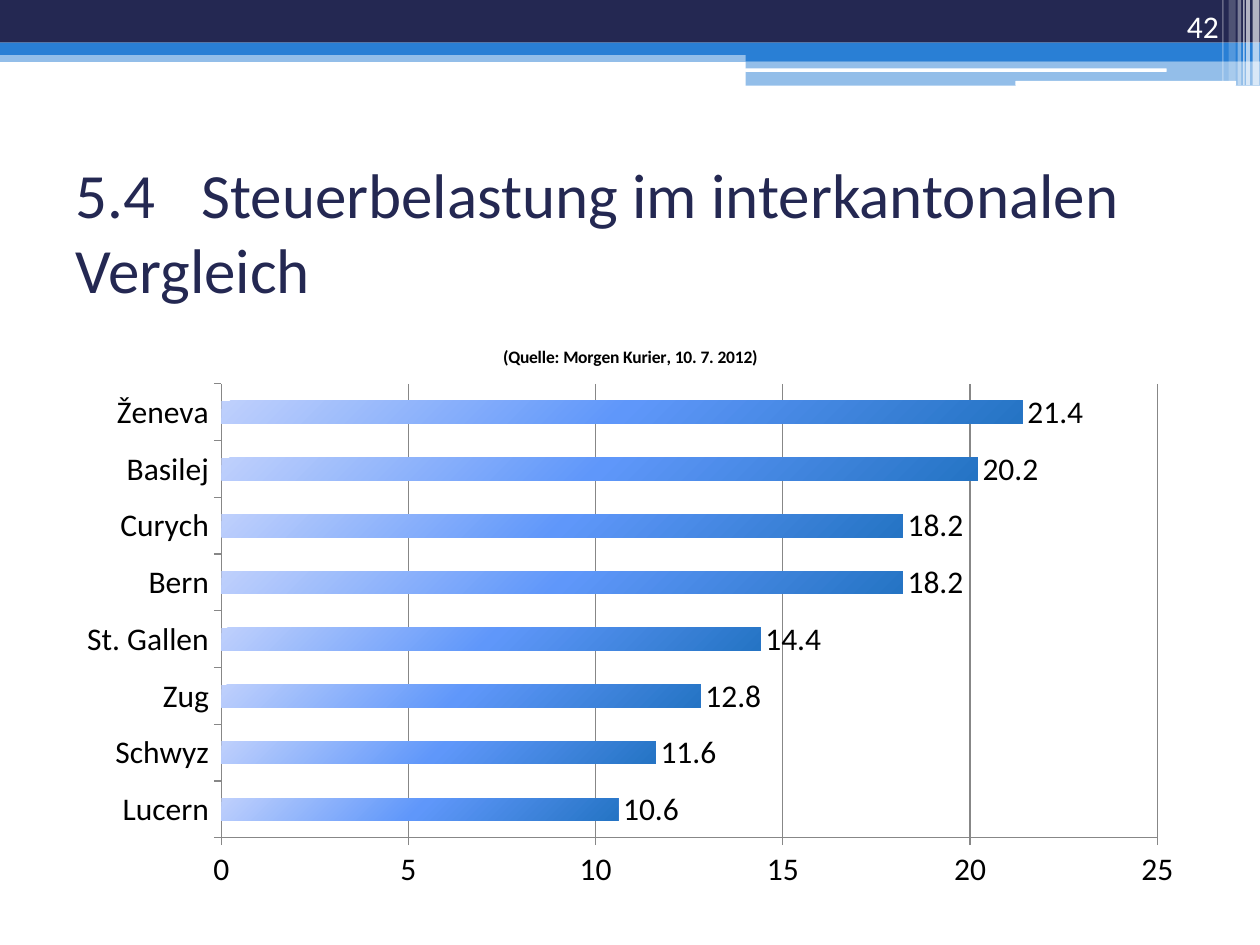
from copy import deepcopy
from dataclasses import dataclass

from lxml import etree
from pptx import Presentation
from pptx.chart.data import CategoryChartData
from pptx.dml.color import RGBColor
from pptx.enum.chart import XL_CHART_TYPE, XL_LABEL_POSITION, XL_TICK_MARK
from pptx.enum.shapes import MSO_SHAPE
from pptx.enum.text import MSO_ANCHOR, MSO_AUTO_SIZE, PP_ALIGN
from pptx.oxml.ns import qn
from pptx.util import Cm, Pt

RECT, ROUND = MSO_SHAPE.RECTANGLE, MSO_SHAPE.ROUNDED_RECTANGLE
LEFT, RIGHT = PP_ALIGN.LEFT, PP_ALIGN.RIGHT
MIDDLE, BOTTOM = MSO_ANCHOR.MIDDLE, MSO_ANCHOR.BOTTOM
FIXED = MSO_AUTO_SIZE.NONE
BAR = XL_CHART_TYPE.BAR_CLUSTERED
OUT_END = XL_LABEL_POSITION.OUTSIDE_END
OUT, NONE = XL_TICK_MARK.OUTSIDE, XL_TICK_MARK.NONE


@dataclass(frozen=True)
class Theme:
    font: str = "Calibri"
    navy: str = "242852"
    blue: str = "297FD5"
    white: str = "FFFFFF"
    black: str = "000000"
    grey: str = "878787"
    shades: tuple = ("BFD0FC", "5F97FA", "2574C4")
    head: int = 36
    body: int = 18
    note: int = 10


class Deck:
    """Draws styled elements on the current slide."""

    def __init__(self, theme):
        self.theme = theme
        self.prs = Presentation()
        self.prs.slide_width, self.prs.slide_height = Cm(25.4), Cm(19.05)
        self.slide = self.prs.slides.add_slide(self.prs.slide_layouts[5])

    def style(self, font, size, color, bold=False):
        font.name, font.size, font.bold = self.theme.font, Pt(size), bold
        font.color.rgb = RGBColor.from_string(color)

    def band(self, box, color, alpha=100, kind=RECT):
        shape = self.slide.shapes.add_shape(kind, *map(Cm, box))
        shape.shadow.inherit = False
        shape.line.fill.background()
        shape.fill.solid()
        shape.fill.fore_color.rgb = RGBColor.from_string(color)
        if alpha < 100:
            tint = shape.element.spPr.find(".//" + qn("a:srgbClr"))
            etree.SubElement(tint, qn("a:alpha"), val=str(alpha * 1000))

    def set_text(self, shape, words, size, color, align, anchor):
        frame = shape.text_frame
        frame.word_wrap, frame.auto_size = True, FIXED
        frame.vertical_anchor = anchor
        para = frame.paragraphs[0]
        para.alignment = align
        run = para.add_run()
        run.text = words
        self.style(run.font, size, color)

    def title(self, box, words):
        shape = self.slide.shapes.title
        shape.left, shape.top, shape.width, shape.height = map(Cm, box)
        self.set_text(shape, words, self.theme.head, self.theme.navy, LEFT, MIDDLE)

    def label(self, box, words):
        shape = self.slide.shapes.add_textbox(*map(Cm, box))
        self.set_text(shape, words, self.theme.body, self.theme.white, RIGHT, BOTTOM)

    def shade(self, chart, fill):
        fill.gradient()
        fill.gradient_angle = 315
        first = chart.element.find(".//" + qn("a:gs"))
        first.addnext(deepcopy(first))
        shades = self.theme.shades
        for i, (stop, color) in enumerate(zip(fill.gradient_stops, shades)):
            stop.position = i / (len(shades) - 1)
            stop.color.rgb = RGBColor.from_string(color)

    def rule(self, line):
        line.width = Pt(0.75)
        line.color.rgb = RGBColor.from_string(self.theme.grey)

    def chart(self, box, head, rows):
        theme = self.theme
        data = CategoryChartData(number_format="0.0")
        data.categories = [name for name, _ in rows]
        data.add_series("Series 1", [value for _, value in rows])
        chart = self.slide.shapes.add_chart(BAR, *map(Cm, box), data).chart
        self.style(chart.font, theme.body, theme.black)
        chart.has_legend = False
        chart.has_title = True
        run = chart.chart_title.text_frame.paragraphs[0].add_run()
        run.text = head
        self.style(run.font, theme.note, theme.black, bold=True)

        for axis in (chart.category_axis, chart.value_axis):
            axis.major_tick_mark, axis.minor_tick_mark = OUT, NONE
            self.rule(axis.format.line)
        chart.category_axis.has_major_gridlines = False
        scale = chart.value_axis
        scale.minimum_scale, scale.maximum_scale, scale.major_unit = 0, 25, 5
        scale.tick_labels.number_format = "0"
        scale.tick_labels.number_format_is_linked = False
        scale.has_major_gridlines = True
        self.rule(scale.major_gridlines.format.line)

        plot = chart.plots[0]
        plot.gap_width, plot.vary_by_categories = 150, False
        plot.has_data_labels = True
        labels = plot.data_labels
        labels.show_value, labels.position = True, OUT_END
        self.style(labels.font, theme.body, theme.black)
        self.shade(chart, plot.series[0].format.fill)


def main():
    theme = Theme()
    deck = Deck(theme)
    bands = [
        ((0, 1.02, 25.4, 0.23), theme.blue, 50),
        ((0, 0, 25.4, 0.86), theme.navy, 100),
        ((0, 0.86, 25.4, 0.25), theme.blue, 100),
        ((15.03, 0.98, 10.37, 0.25), theme.blue, 100),
        ((15.03, 1.23, 10.37, 0.5), theme.blue, 50),
    ]
    for box, color, alpha in bands:
        deck.band(box, color, alpha)
    for box in ((15.02, 1.38, 8.5, 0.07), (20.47, 1.63, 4.45, 0.1)):
        deck.band(box, theme.white, kind=ROUND)
    stripes = [
        (25.25, 0.14, 1.72, 65), (25.12, 0.08, 1.72, 65),
        (25.06, 0.03, 1.72, 60), (24.95, 0.07, 1.72, 40),
        (24.77, 0.14, 1.63, 20), (24.64, 0.03, 1.63, 30),
    ]
    for left, width, height, alpha in stripes:
        deck.band((left, 0, width, height), theme.white, alpha)

    deck.title((1.27, 3.17, 22.86, 2.97),
               "5.4\tSteuerbelastung im interkantonalen Vergleich")
    deck.label((22.71, 0, 2.11, 1.02), "42")
    rows = [
        ("Lucern", 10.6), ("Schwyz", 11.6), ("Zug", 12.8), ("St. Gallen", 14.4),
        ("Bern", 18.2), ("Curych", 18.2), ("Basilej", 20.2), ("Ženeva", 21.4),
    ]
    deck.chart((1.3, 6.53, 22.81, 11.61),
               "(Quelle: Morgen Kurier, 10. 7. 2012)", rows)
    deck.prs.save("out.pptx")


if __name__ == "__main__":
    main()
